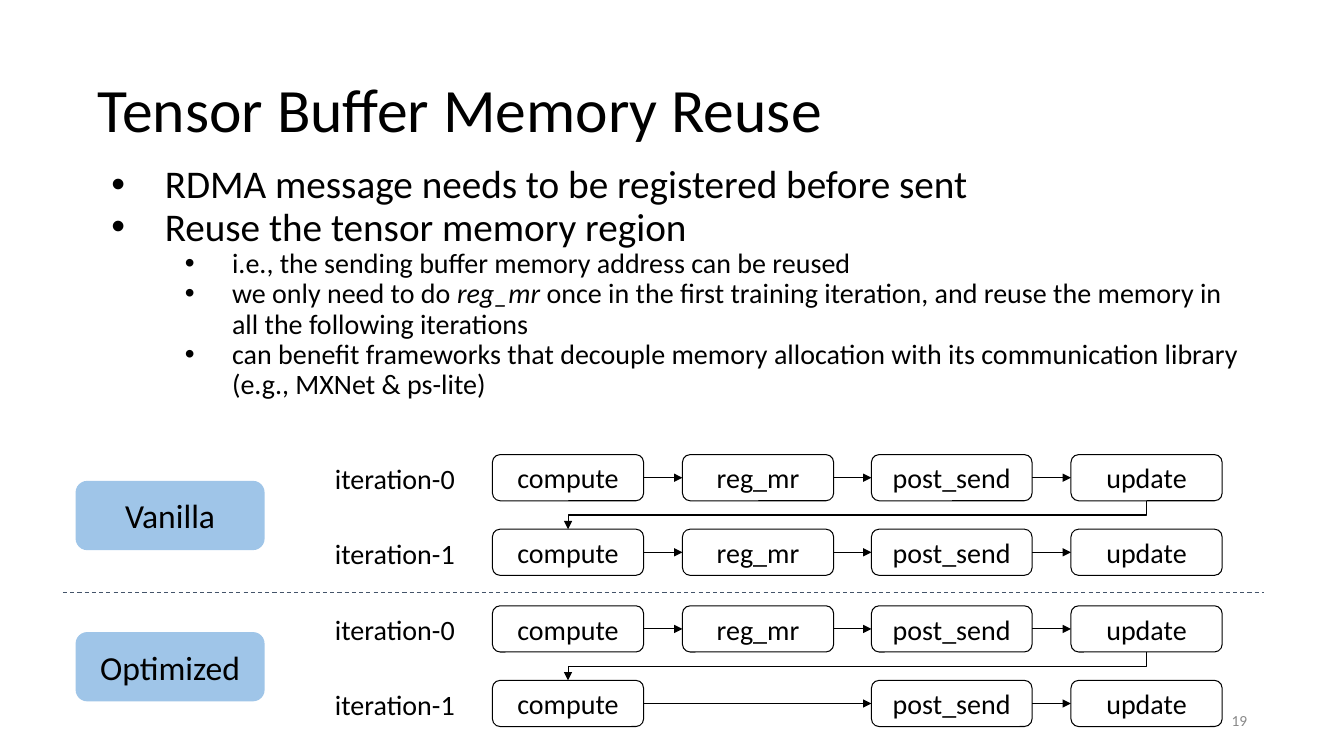
"""Build the slide on reusing tensor buffer memory across training iterations."""
from dataclasses import dataclass
from itertools import pairwise

from lxml.etree import SubElement
from pptx import Presentation
from pptx.dml.color import RGBColor
from pptx.enum.dml import MSO_LINE
from pptx.enum.shapes import MSO_CONNECTOR as LINK, MSO_SHAPE
from pptx.enum.text import MSO_ANCHOR as ANCHOR, MSO_AUTO_SIZE, PP_ALIGN as ALIGN
from pptx.oxml.ns import qn
from pptx.util import Pt

TITLE = "Tensor Buffer Memory Reuse"
POINTS = [
    (0, ["RDMA message needs to be registered before sent"]),
    (0, ["Reuse the tensor memory region"]),
    (1, ["i.e., the sending buffer memory address can be reused"]),
    (1, ["we only need to do ", "reg_mr",
         " once in the first training iteration, and reuse the memory in all the following iterations"]),
    (1, ["can benefit frameworks that decouple memory allocation with its communication library "
         "(e.g., MXNet & ps-lite)"]),
]
ITALIC_TERM = "reg_mr"
FULL = ["compute", "reg_mr", "post_send", "update"]
REUSED = ["compute", "post_send", "update"]
SCHEMES = [("Vanilla", [FULL, FULL]), ("Optimized", [FULL, REUSED])]
PAGE = "19"

STAGE_SPANS = {"compute": (469, 144), "reg_mr": (650, 144), "post_send": (830, 153), "update": (1020, 144)}
STAGES_TOP, STAGE_HEIGHT, ITERATION_STEP, SCHEME_STEP = 433, 44, 71, 144
BULLET_INDENTS = [(64, -51), (128, -45)]


@dataclass(frozen=True)
class Theme:
    """Colours, font and type sizes."""
    font: str = "Calibri"
    ink: str = "000000"
    scheme: str = "9FC5E8"
    divider: str = "44546A"
    page: str = "888888"
    title_size: int = 44
    point_sizes: tuple = (28, 20)
    scheme_size: int = 24
    stage_size: int = 20
    page_size: int = 11


theme = Theme()


def px(length):
    return round(length * 9525)


def add_run(paragraph, text, size, color=theme.ink, italic=None):
    run = paragraph.add_run()
    run.text = text
    run.font.name, run.font.size, run.font.italic = theme.font, Pt(size), italic
    run.font.color.rgb = RGBColor.from_string(color)


def set_frame(shape, inset, anchor):
    frame = shape.text_frame
    frame.word_wrap, frame.auto_size, frame.vertical_anchor = True, MSO_AUTO_SIZE.NONE, anchor
    frame.margin_left = frame.margin_right = frame.margin_top = frame.margin_bottom = px(inset)
    return frame


def place(shape, *box):
    shape.left, shape.top, shape.width, shape.height = map(px, box)


def add_label(slide, text, box, size, align=ALIGN.LEFT, color=theme.ink, inset=12):
    label = slide.shapes.add_textbox(*map(px, box))
    paragraph = set_frame(label, inset, ANCHOR.MIDDLE).paragraphs[0]
    paragraph.alignment = align
    add_run(paragraph, text, size, color)


def add_box(slide, text, box, size, fill=None):
    rounded = slide.shapes.add_shape(MSO_SHAPE.ROUNDED_RECTANGLE, *map(px, box))
    rounded.shadow.inherit = False
    if fill:
        rounded.fill.solid()
        rounded.fill.fore_color.rgb = RGBColor.from_string(fill)
        rounded.line.fill.background()
    else:
        rounded.fill.background()
        rounded.line.color.rgb = RGBColor.from_string(theme.ink)
        rounded.line.width = Pt(0.75)
    paragraph = set_frame(rounded, 12, ANCHOR.MIDDLE).paragraphs[0]
    paragraph.alignment = ALIGN.CENTER
    add_run(paragraph, text, size)
    return rounded


def add_link(slide, kind, ends, color=theme.ink, arrow=True):
    link = slide.shapes.add_connector(kind, *map(px, ends))
    link.line.color.rgb = RGBColor.from_string(color)
    link.line.width = Pt(0.75)
    if arrow:
        SubElement(link.line._get_or_add_ln(), qn("a:tailEnd"), type="triangle")
    SubElement(link._element.spPr, qn("a:effectLst"))
    return link


def add_points(body):
    frame = set_frame(body, 5, ANCHOR.TOP)
    for index, (level, parts) in enumerate(POINTS):
        paragraph = frame.add_paragraph() if index else frame.paragraphs[0]
        paragraph.level, paragraph.line_spacing = level, 0.9
        paragraph.space_before, paragraph.space_after = Pt(0 if index else 10.7), Pt(0)
        margin, indent = BULLET_INDENTS[level]
        properties = paragraph._p.get_or_add_pPr()
        properties.set("marL", str(px(margin)))
        properties.set("indent", str(px(indent)))
        SubElement(properties, qn("a:buFont"), typeface="Arial")
        SubElement(properties, qn("a:buChar"), char="•")
        for part in parts:
            add_run(paragraph, part, theme.point_sizes[level], italic=part == ITALIC_TERM)


def add_iteration(slide, number, stages, top):
    add_label(slide, f"iteration-{number}", (307, top, 157, 45), theme.stage_size)
    boxes = []
    for stage in stages:
        left, width = STAGE_SPANS[stage]
        boxes.append(add_box(slide, stage, (left, top, width, STAGE_HEIGHT), theme.stage_size))
    for before, after in pairwise(boxes):
        arrow = add_link(slide, LINK.STRAIGHT, (0, 0, 0, 0))
        arrow.begin_connect(before, 3)
        arrow.end_connect(after, 1)


def add_return(slide, top):
    target, source = (left + width / 2 for left, width in (STAGE_SPANS["compute"], STAGE_SPANS["update"]))
    gap, run = ITERATION_STEP - STAGE_HEIGHT, source - target
    x, y = (source + target) / 2, top + STAGE_HEIGHT + gap / 2
    loop = add_link(slide, LINK.ELBOW, (x - gap / 2, y - run / 2, x + gap / 2, y + run / 2))
    loop.rotation = 90


def main():
    deck = Presentation()
    deck.slide_width, deck.slide_height = px(1280), px(720)
    slide = deck.slides.add_slide(deck.slide_layouts[1])
    title, body = slide.placeholders
    place(title, 88, 38, 1104, 139)
    heading = set_frame(title, 5, ANCHOR.MIDDLE).paragraphs[0]
    heading.alignment, heading.line_spacing = ALIGN.LEFT, 0.9
    add_run(heading, TITLE, theme.title_size)
    place(body, 88, 152, 1104, 248)
    add_points(body)

    for row, (scheme, iterations) in enumerate(SCHEMES):
        top = STAGES_TOP + row * SCHEME_STEP
        for number, stages in enumerate(iterations):
            add_iteration(slide, number, stages, top + number * ITERATION_STEP)
        add_return(slide, top)
        add_box(slide, scheme, (72, top + 25, 180, 66), theme.scheme_size, theme.scheme)

    divider = add_link(slide, LINK.STRAIGHT, (60, 564, 1204, 564), theme.divider, arrow=False)
    divider.line.dash_style = MSO_LINE.DASH
    add_label(slide, PAGE, (1163, 672, 29, 29), theme.page_size, ALIGN.RIGHT, theme.page, inset=4)
    deck.save("out.pptx")


if __name__ == "__main__":
    main()
